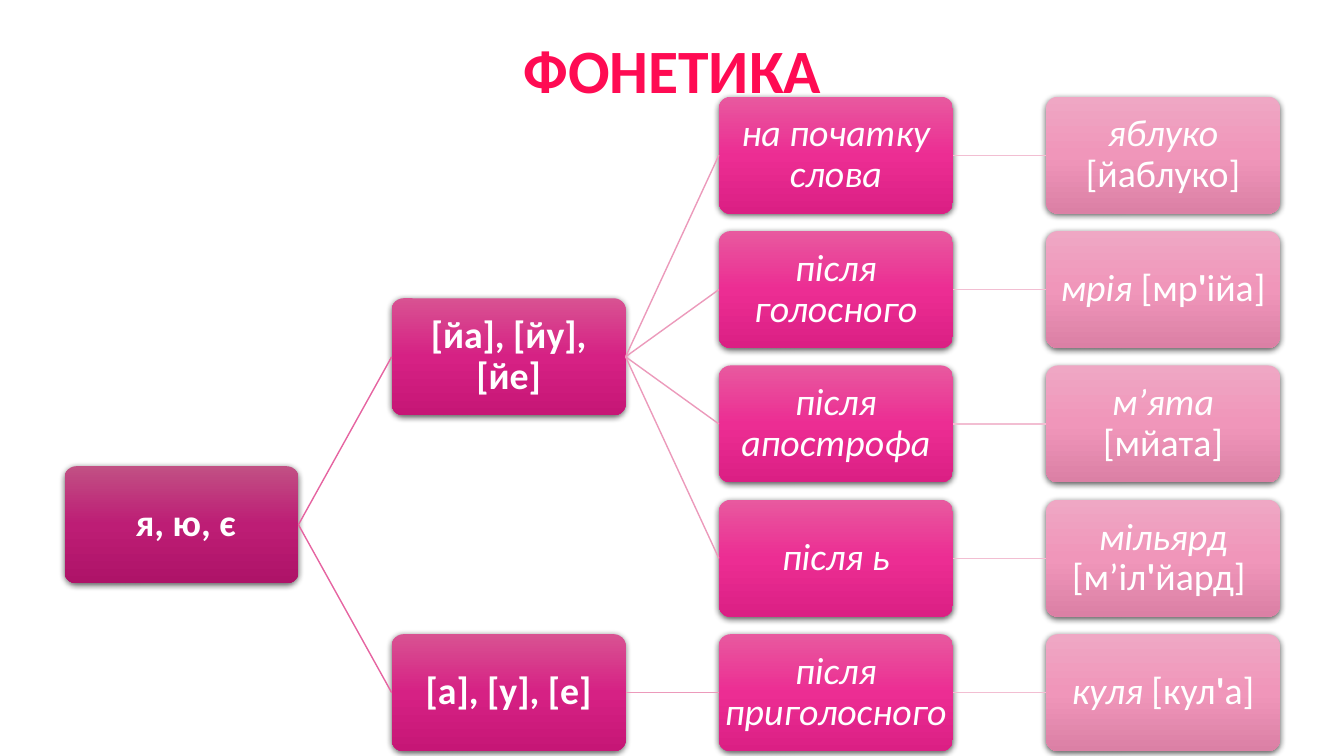
from copy import deepcopy

from lxml import etree
from pptx import Presentation
from pptx import util as u
from pptx.dml.color import RGBColor
from pptx.enum import shapes, text
from pptx.oxml.ns import qn

COLORS = {
    "title": "FF0B53",
    "label": "FFFFFF",
    "shadow": "000000",
    "levels": [
        ["C15084", "BD1D75", "AE1368"],
        ["D85292", "D62184", "C61676"],
        ["E8599F", "EC2D93", "DB1F84"],
        ["EFA7C4", "F096BA", "DB80A5"],
    ],
    "branches": ["E664A1", "EC9ABB", "F2BED2"],
}
BOX_W, BOX_H = 2.32, 1.16
LEFT, TOP = 0.64, 0.96
COLUMN_STEP, ROW_STEP = 3.245, 1.333

positions = [
    ("на початку слова", [("яблуко ", "i"), ("[йаблуко]", "")]),
    ("після голосного", [("мрія ", "i"), ("[мр", ""), ("'", "b"), ("ійа]", "")]),
    ("після апострофа", [("м’ята ", "i"), ("[мйата]", "")]),
    ("після ь", [("мільярд ", "i"), ("[м’іл", ""), ("'", "b"), ("йард] ", "")]),
    ("після приголосного", [("куля ", "i"), ("[кул", ""), ("'", "b"), ("а]", "")]),
]


def add_runs(paragraph, pieces, size, color):
    paragraph.alignment = text.PP_ALIGN.CENTER
    paragraph.line_spacing = 0.9
    for wording, style in pieces:
        run = paragraph.add_run()
        run.text = wording
        run.font.name = "Calibri"
        run.font.size = u.Pt(size)
        run.font.bold = "b" in style
        run.font.italic = "i" in style
        run.font.color.rgb = RGBColor.from_string(color)


def add_node(level, row, pieces, parent=None):
    node = slide.shapes.add_shape(
        shapes.MSO_SHAPE.ROUNDED_RECTANGLE,
        u.Inches(LEFT + level * COLUMN_STEP), u.Inches(TOP + row * ROW_STEP),
        u.Inches(BOX_W), u.Inches(BOX_H))
    node.adjustments[0] = 0.1
    node.line.fill.background()
    node.fill.gradient()
    node.fill.gradient_angle = 270
    stops = node._element.spPr.find(".//" + qn("a:gsLst"))
    stops.append(deepcopy(stops[0]))
    for index, (stop, shade) in enumerate(zip(node.fill.gradient_stops, COLORS["levels"][level])):
        stop.position = index / 2
        stop.color.rgb = RGBColor.from_string(shade)

    node.shadow.inherit = False
    effects = node._element.spPr.find(qn("a:effectLst"))
    shadow = etree.SubElement(effects, qn("a:outerShdw"), blurRad=str(u.Pt(4.5)),
                              dist=str(u.Pt(1.5)), dir="5400000", rotWithShape="0")
    tint = etree.SubElement(shadow, qn("a:srgbClr"), val=COLORS["shadow"])
    etree.SubElement(tint, qn("a:alpha"), val="63000")

    frame = node.text_frame
    frame.word_wrap = True
    frame.vertical_anchor = text.MSO_ANCHOR.MIDDLE
    frame.margin_left = frame.margin_right = u.Inches(0.01)
    frame.margin_top = frame.margin_bottom = u.Inches(0.01)
    add_runs(frame.paragraphs[0], pieces, 27, COLORS["label"])

    if parent is not None:
        branch = slide.shapes.add_connector(shapes.MSO_CONNECTOR.STRAIGHT, 0, 0, 0, 0)
        branch.begin_connect(parent, 3)
        branch.end_connect(node, 1)
        branch.line.width = u.Pt(1)
        branch.line.color.rgb = RGBColor.from_string(COLORS["branches"][level - 1])
        etree.SubElement(branch._element.spPr, qn("a:effectLst"))
    return node


deck = Presentation()
deck.slide_width, deck.slide_height = u.Inches(13.33), u.Inches(7.5)
slide = deck.slides.add_slide(deck.slide_layouts[6])

title = slide.shapes.add_textbox(u.Inches(0.92), 0, u.Inches(11.5), u.Inches(1.45)).text_frame
title.word_wrap = True
title.vertical_anchor = text.MSO_ANCHOR.MIDDLE
add_runs(title.paragraphs[0], [("ФОНЕТИКА", "b")], 44, COLORS["title"])

letters = add_node(0, 2.75, [(" я, ю, є", "b")])
two_sounds = add_node(1, 1.5, [("[йа], [йу], [йе]", "b")], letters)
one_sound = add_node(1, 4, [("[а], [у], [е]", "b")], letters)

for row, (position, example) in enumerate(positions):
    sounds = two_sounds if row < 4 else one_sound
    place = add_node(2, row, [(position, "i")], sounds)
    add_node(3, row, example, place)

deck.save("out.pptx")
